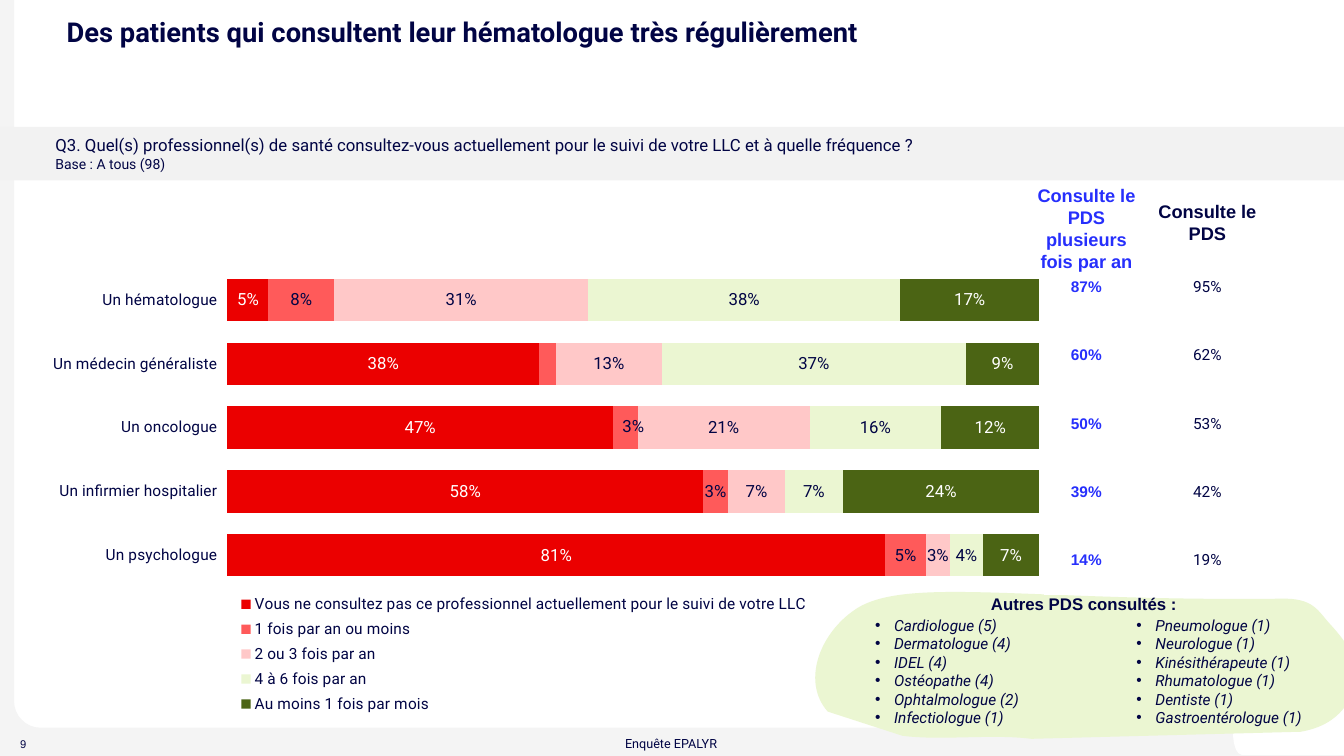
from lxml import etree
from pptx import Presentation
from pptx.chart.data import CategoryChartData
from pptx.dml.color import RGBColor
from pptx.enum.chart import XL_CHART_TYPE, XL_LABEL_POSITION, XL_LEGEND_POSITION, XL_TICK_LABEL_POSITION
from pptx.enum.shapes import MSO_SHAPE
from pptx.enum.text import MSO_ANCHOR, PP_ALIGN
from pptx.oxml.ns import qn
from pptx.util import Inches, Pt

LEFT, CENTER = PP_ALIGN.LEFT, PP_ALIGN.CENTER
TOP, MIDDLE = MSO_ANCHOR.TOP, MSO_ANCHOR.MIDDLE
WIDTH, HEIGHT = 13.33, 7.5
NAVY, BLUE, WHITE, GREY, BAND, PALE = "010444", "262FFC", "FFFFFF", "F4F4F4", "F2F2F2", "EBF6D2"

TITLE = "Des patients qui consultent leur hématologue très régulièrement"
QUESTION = [
    ("Q3. Quel(s) professionnel(s) de santé consultez-vous actuellement pour le suivi de votre LLC et à quelle fréquence ?", 12),
    ("Base : A tous (98)", 10),
]
PROFESSIONALS = ["Un hématologue", "Un médecin généraliste", "Un oncologue", "Un infirmier hospitalier", "Un psychologue"]
FREQUENCIES = [
    ("Vous ne consultez pas ce professionnel actuellement pour le suivi de votre LLC",
     (0.05, 0.38, 0.47, 0.58, 0.81), "EB0000", WHITE),
    ("1 fois par an ou moins", (0.08, 0.02, 0.03, 0.03, 0.05), "FF5A5A", NAVY),
    ("2 ou 3 fois par an", (0.31, 0.13, 0.21, 0.07, 0.03), "FFC8C8", NAVY),
    ("4 à 6 fois par an", (0.38, 0.37, 0.16, 0.07, 0.04), PALE, NAVY),
    ("Au moins 1 fois par mois", (0.17, 0.09, 0.12, 0.24, 0.07), "4B6414", WHITE),
]
RARE_SERIES, HIDDEN_POINT, MOVED_POINT = 1, 1, 2
TOTALS = [
    {"header": "Consulte le PDS", "box": (11.49, 1.99, 0.97, 0.44), "left": 11.56,
     "values": ("95%", "62%", "53%", "42%", "19%"), "format": {"name": "Roboto"}, "color": NAVY},
    {"header": "Consulte le PDS plusieurs fois par an", "box": (10.23, 1.83, 1.09, 0.66), "left": 10.36,
     "values": ("87%", "60%", "50%", "39%", "14%"), "format": {"name": "Arial", "bold": True}, "color": BLUE},
]
OTHERS = [
    "Cardiologue (5)", "Dermatologue (4)", "IDEL (4)", "Ostéopathe (4)", "Ophtalmologue (2)", "Infectiologue (1)",
    "Pneumologue (1)", "Neurologue (1)", "Kinésithérapeute (1)", "Rhumatologue (1)", "Dentiste (1)",
    "Gastroentérologue (1)",
]
FRAME_BOX, CORNER_BOX, BLOB_BOX = (0, 0, WIDTH, HEIGHT), (12.23, 6.46, 1.1, 1.03), (8.08, 5.87, 5.38, 1.46)
FRAME = [(0, 0), (0.14, 0), (0.14, 6.96), (0.14, 7.1, 0.26, 7.22, 0.4, 7.22),
         (WIDTH, 7.22), (WIDTH, HEIGHT), (0, HEIGHT)]
CORNER = [(12.58, 6.46), (WIDTH, 6.46), (WIDTH, 7.49), (12.32, 7.49), (12.27, 7.49, 12.23, 7.4, 12.23, 7.27),
          (12.23, 6.46)]
BLOB = [(8.45, 6.07), (8.93, 5.7, 10.13, 5.97, 12.7, 5.94), (13.03, 5.93, 13.07, 6.06, 13.19, 6.19),
        (13.32, 6.33, 13.51, 6.57, 13.46, 6.75), (13.41, 6.92, 13.31, 7.19, 12.9, 7.26), (10.23, 7.33),
        (9.84, 7.28, 9.33, 7.35, 8.95, 7.3), (8.21, 7.06), (7.96, 6.78, 8.11, 6.32, 8.45, 6.07)]


def rgb(color):
    return RGBColor.from_string(color)


def set_font(font, size, color=NAVY, **values):
    values = {"name": "Roboto", "size": Pt(size), **values}
    for name, value in values.items():
        setattr(font, name, value)
    font.color.rgb = rgb(color)


def set_frame(frame, anchor=MIDDLE, insets=(0.1, 0.05, 0.1, 0.05)):
    frame.word_wrap = True
    frame.vertical_anchor = anchor
    for side, inset in zip(("left", "top", "right", "bottom"), insets):
        setattr(frame, f"margin_{side}", Inches(inset))


def add_text(slide, text, box, size, color=NAVY, align=CENTER, anchor=MIDDLE, insets=(0, 0, 0, 0), **values):
    shape = slide.shapes.add_textbox(*map(Inches, box))
    set_frame(shape.text_frame, anchor, insets)
    paragraph = shape.text_frame.paragraphs[0]
    paragraph.text, paragraph.alignment = text, align
    set_font(paragraph.font, size, color, **values)


def paint(shape, color):
    shape.shadow.inherit = False
    shape.fill.solid()
    shape.fill.fore_color.rgb = rgb(color)
    shape.line.fill.background()


def add_outline(slide, steps, box, color):
    anchors = [tuple(map(Inches, step[-2:])) for step in steps]
    builder = slide.shapes.build_freeform(*anchors[0], scale=1.0)
    builder.add_line_segments(anchors[1:], close=True)
    shape = builder.convert_to_shape()
    shape.left, shape.top, shape.width, shape.height = map(Inches, box)
    outline = next(shape._element.iter(qn("a:path")))
    outline.set("w", str(shape.width))
    outline.set("h", str(shape.height))
    for segment, step in zip(list(outline), steps):
        if len(step) == 6:
            segment.tag = qn("a:cubicBezTo")
        for point in list(segment):
            segment.remove(point)
        for x, y in zip(step[::2], step[1::2]):
            point = etree.SubElement(segment, qn("a:pt"))
            point.set("x", str(Inches(x) - shape.left))
            point.set("y", str(Inches(y) - shape.top))
    paint(shape, color)
    return shape


def make_layout(box, target=None):
    layout = etree.Element(qn("c:layout"))
    manual = etree.SubElement(layout, qn("c:manualLayout"))
    entries = [("layoutTarget", target)] if target else []
    if len(box) == 4:
        entries += [("xMode", "edge"), ("yMode", "edge")]
    for tag, value in entries + list(zip("xywh", box)):
        etree.SubElement(manual, qn(f"c:{tag}")).set("val", str(value))
    return layout


def adjust_rare_labels(series):
    moved = series.points[MOVED_POINT].data_label
    set_font(moved.font, 12)
    moved.position = XL_LABEL_POSITION.CENTER
    labels = series.data_labels._element
    labels.find(qn("c:dLbl")).insert(1, make_layout((0.008, -0.002)))
    hidden = etree.Element(qn("c:dLbl"))
    for tag, value in (("idx", HIDDEN_POINT), ("delete", 1)):
        etree.SubElement(hidden, qn(f"c:{tag}")).set("val", str(value))
    labels.insert(0, hidden)


def add_frequency_chart(slide):
    data = CategoryChartData(number_format="0%")
    data.categories = PROFESSIONALS
    for name, values, _, _ in FREQUENCIES:
        data.add_series(name, values)
    box = map(Inches, (0.48, 1.97, 9.98, 5.4))
    chart = slide.shapes.add_chart(XL_CHART_TYPE.BAR_STACKED_100, *box, data).chart
    set_font(chart.font, 18)
    chart.has_title = False
    plot = chart.plots[0]
    plot.gap_width, plot.overlap, plot.vary_by_categories = 50, 100, False
    for series, (_, _, color, label_color) in zip(plot.series, FREQUENCIES):
        series.format.fill.solid()
        series.format.fill.fore_color.rgb = rgb(color)
        labels = series.data_labels
        labels.show_value, labels.position = True, XL_LABEL_POSITION.CENTER
        labels.number_format, labels.number_format_is_linked = "0%", False
        set_font(labels.font, 12, label_color)
    adjust_rare_labels(plot.series[RARE_SERIES])
    category_axis, value_axis = chart.category_axis, chart.value_axis
    category_axis.reverse_order = True
    category_axis.tick_label_position = XL_TICK_LABEL_POSITION.LOW
    category_axis.format.line.fill.background()
    set_font(category_axis.tick_labels.font, 11)
    value_axis.minimum_scale, value_axis.maximum_scale = 0, 1
    value_axis.has_major_gridlines = value_axis.visible = False
    chart.has_legend = True
    chart.legend.position = XL_LEGEND_POSITION.BOTTOM
    chart.legend.include_in_layout = False
    set_font(chart.legend.font, 11)
    chart_element = chart.element.find(qn("c:chart"))
    plot_area, legend = chart_element.find(qn("c:plotArea")), chart_element.find(qn("c:legend"))
    for parent in (plot_area, legend):
        for layout in parent.findall(qn("c:layout")):
            parent.remove(layout)
    plot_area.insert(0, make_layout((0.178, 0.128, 0.807, 0.586), "inner"))
    legend.insert(1, make_layout((0.178, 0.717, 0.59, 0.24)))


def add_total_column(slide, total):
    box = map(Inches, (total["left"], 2.505, 0.83, 3.39))
    table = slide.shapes.add_table(len(PROFESSIONALS), 1, *box).table
    table.first_row = table.horz_banding = False
    for row, value in enumerate(total["values"]):
        cell = table.cell(row, 0)
        cell.fill.background()
        cell.vertical_anchor = MIDDLE
        cell.margin_left = cell.margin_right = cell.margin_top = Inches(0.01)
        cell.margin_bottom = 0
        paragraph = cell.text_frame.paragraphs[0]
        paragraph.text, paragraph.alignment = value, CENTER
        set_font(paragraph.font, 11, total["color"], **total["format"])


def add_others(slide):
    frame = add_outline(slide, BLOB, BLOB_BOX, PALE).text_frame
    set_frame(frame, MIDDLE, (0.1, 0.43, 0.1, 0.31))
    frame._txBody.bodyPr.set("numCol", "2")
    for index, name in enumerate(OTHERS):
        paragraph = frame.add_paragraph() if index else frame.paragraphs[0]
        paragraph.text, paragraph.alignment, paragraph.level = name, LEFT, 1
        properties = paragraph._p.get_or_add_pPr()
        properties.set("marL", str(Inches(0.69)))
        properties.set("indent", str(Inches(-0.19)))
        etree.SubElement(properties, qn("a:buFont")).set("typeface", "Arial")
        etree.SubElement(properties, qn("a:buChar")).set("char", "•")
        set_font(paragraph.font, 11, italic=True)
    add_text(slide, "Autres PDS consultés :", (9.71, 5.84, 2.08, 0.3), 12, name="Arial", bold=True)


def main():
    presentation = Presentation()
    presentation.slide_width, presentation.slide_height = Inches(WIDTH), Inches(HEIGHT)
    slide = presentation.slides.add_slide(presentation.slide_layouts[5])
    add_outline(slide, FRAME, FRAME_BOX, GREY)
    add_text(slide, "Enquête EPALYR", (2.26, 7.31, 8.79, 0.13), 9)
    add_outline(slide, CORNER, CORNER_BOX, WHITE)
    add_text(slide, "9", (0.1, 7.2, 0.41, 0.36), 8, align=LEFT, insets=(0.1, 0.05, 0.1, 0.05), name="Arial")
    add_frequency_chart(slide)
    title = slide.shapes.title
    title.left, title.top, title.width, title.height = map(Inches, (0.56, 0.14, 11.54, 0.73))
    set_frame(title.text_frame, TOP)
    heading = title.text_frame.paragraphs[0]
    heading.text, heading.alignment, heading.line_spacing = TITLE, LEFT, 0.9
    set_font(heading.font, 19.5, bold=True)
    add_others(slide)
    band = slide.shapes.add_shape(MSO_SHAPE.RECTANGLE, *map(Inches, (0, 1.26, WIDTH, 0.53)))
    paint(band, BAND)
    set_frame(band.text_frame, TOP, (0.55, 0.08, 0.55, 0.08))
    for index, (line, size) in enumerate(QUESTION):
        paragraph = band.text_frame.add_paragraph() if index else band.text_frame.paragraphs[0]
        paragraph.text, paragraph.alignment = line, LEFT
        set_font(paragraph.font, size)
    for total in TOTALS:
        add_total_column(slide, total)
        add_text(slide, total["header"], total["box"], 13, total["color"], anchor=TOP, name="Arial", bold=True)
    presentation.save("out.pptx")


if __name__ == "__main__":
    main()
